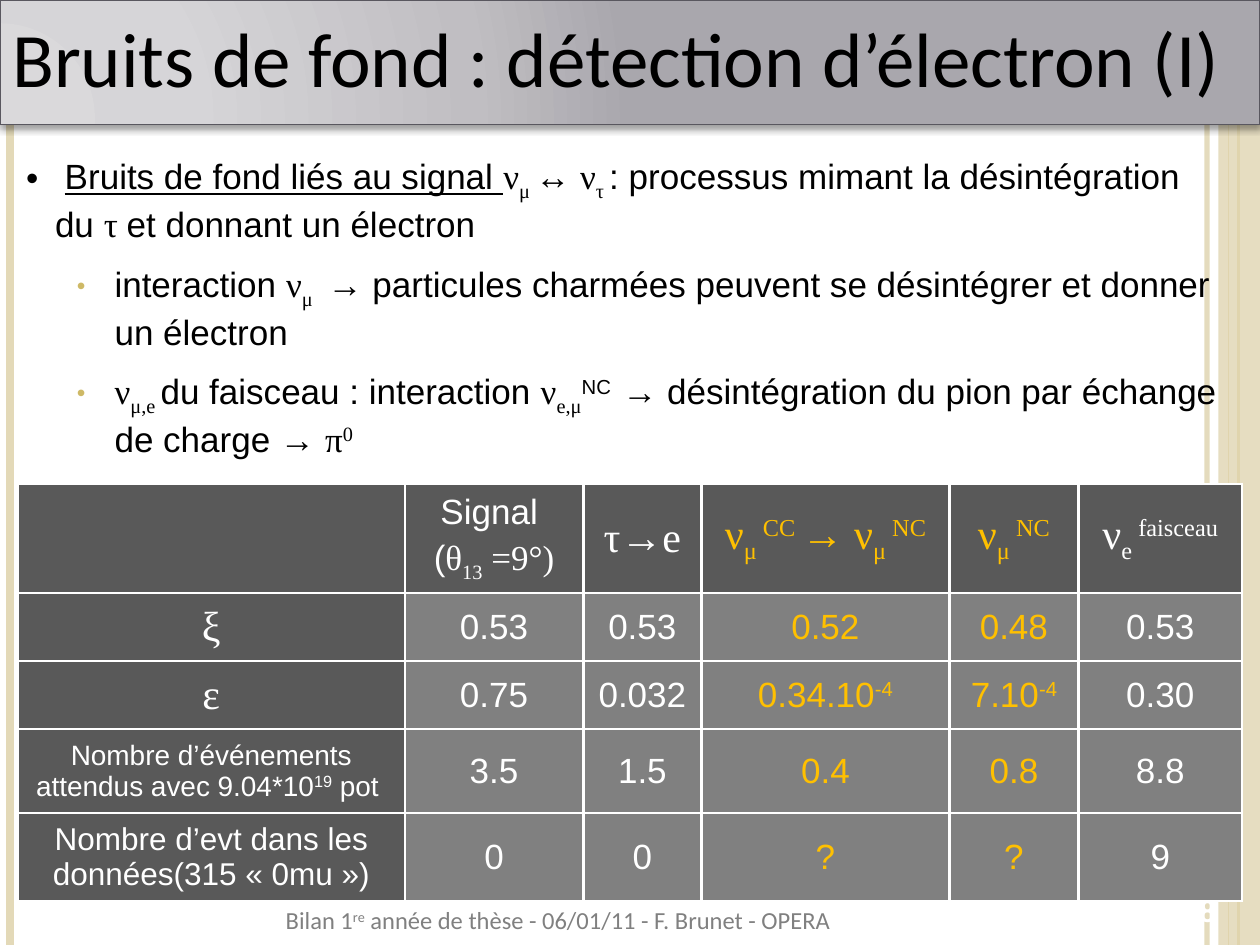
"""Build the slide on backgrounds to electron detection, with its table of expected events."""
from pptx import Presentation
from pptx.dml.color import RGBColor
from pptx.enum.shapes import MSO_CONNECTOR, MSO_SHAPE
from pptx.enum.text import MSO_ANCHOR, PP_ALIGN
from pptx.oxml import parse_xml
from pptx.oxml.ns import nsdecls
from pptx.util import Cm, Pt

TITLE = "Bruits de fond : détection d’électron (I)"
FOOTER = [("", "Bilan 1"), ("^", "re"), ("", " année de thèse - 06/01/11 - F. Brunet - OPERA")]
PAGE = "8"

POINTS = [
    [("", " "), ("U", "Bruits de fond liés au signal "), ("T", "ν"), ("T_", "μ "), ("", "↔ "),
     ("T", "ν"), ("T_", "τ "), ("", ": processus mimant la désintégration du "), ("T", "τ "),
     ("", "et donnant un électron")],
    [("", "interaction "), ("T", "ν"), ("T_", "μ "),
     ("", " → particules charmées peuvent se désintégrer et donner un électron")],
    [("T", "ν"), ("T_", "μ,e "), ("", "du faisceau : interaction "), ("T", "ν"), ("T_", "e,μ"),
     ("^", "NC  "), ("", "→ désintégration du pion par échange de charge → "), ("T", "π"),
     ("T^", "0")],
]

HEADINGS = [
    (20, [[("", "Signal ")], [("", "("), ("T", "θ"), ("T_", "13"), ("T", " =9°)")]]),
    (24, [[("T", "τ→e")]]),
    (24, [[("T", "ν"), ("T_", "μ "), ("T^", "CC "), ("T", "→ ν"), ("T_", "μ "), ("T^", "NC")]]),
    (24, [[("T", "ν"), ("T_", "μ "), ("T^", "NC")]]),
    (24, [[("T", "ν"), ("T_", "e "), ("T^", "faisceau")]]),
]
LABELS = [
    (24, [[("T", "ξ")]]),
    (24, [[("T", "ε")]]),
    (16, [[("", "Nombre d’événements attendus avec 9.04*10"), ("^", "19"), ("", " pot ")]]),
    (18, [[("", "Nombre d’evt dans les données(315 «\u00a00mu\u00a0»)")]]),
]
VALUES = [
    ["0.53", "0.53", "0.52", "0.48", "0.53"],
    ["0.75", "0.032", "0.34.10^-4", "7.10^-4", "0.30"],
    ["3.5", "1.5", "0.4", "0.8", "8.8"],
    ["0", "0", "?", "?", "9"],
]
GOLD_COLUMNS = (3, 4)
COLUMN_WIDTHS = [7.8, 3.6, 2.38, 5, 2.6, 3.3]
ROW_HEIGHTS = [2.18, 1.37, 1.37, 1.69, 1.75]

SAND, OCHRE, WHITE, GOLD = "E3D9B8", "CEB966", "FFFFFF", "FFC000"
DARK, GREY = "595959", "808080"
STRIPES = [(24.33, SAND, 3, 93), (0.2, SAND, 4.5, 100), (24.97, OCHRE, 1.5, 100),
           (24.77, OCHRE, 0.75, 100)]
BANNER_STOPS = [(0, "DAD9DB"), (30, "D6D5D8"), (75, "C0BEC2"), (100, "A9A7AD")]
BULLETS = [
    {"margin": 0.58, "hang": 0.58, "color": "000000", "scale": 100},
    {"margin": 1.78, "hang": 0.76, "color": OCHRE, "scale": 70},
]


def color(code):
    return RGBColor.from_string(code)


def apply(target, formats):
    for name, value in formats.items():
        setattr(target, name, value)


def drawing(tag, attributes="", inner=""):
    return parse_xml(f'<a:{tag} {nsdecls("a")} {attributes}>{inner}</a:{tag}>')


def fade(part, percent):
    shade = part._element.xpath("./p:spPr//a:srgbClr")[0]
    shade.append(drawing("alpha", f'val="{percent * 1000}"'))


def write(frame, paragraphs, size, ink, face="Arial", bold=False, layout=None, gap=0):
    for number, runs in enumerate(paragraphs):
        paragraph = frame.add_paragraph() if number else frame.paragraphs[0]
        apply(paragraph, {"space_before": Pt(gap if number else 0), **(layout or {})})
        for marks, words in runs:
            run = paragraph.add_run()
            run.text = words
            apply(run.font, {"name": "Times New Roman" if "T" in marks else face,
                             "size": Pt(size), "bold": bold, "underline": "U" in marks})
            run.font.color.rgb = color(ink)
            for mark, shift in (("_", "-25000"), ("^", "30000")):
                if mark in marks:
                    run.font._element.set("baseline", shift)


def text_box(slide, place, anchor=MSO_ANCHOR.TOP):
    frame = slide.shapes.add_textbox(*map(Cm, place)).text_frame
    apply(frame, {"word_wrap": True, "vertical_anchor": anchor})
    return frame


def rectangle(slide, place):
    shape = slide.shapes.add_shape(MSO_SHAPE.RECTANGLE, *map(Cm, place))
    shape.shadow.inherit = False
    shape.fill.solid()
    return shape


def add_stripes(slide):
    for x, ink, width, opacity in STRIPES:
        stripe = slide.shapes.add_connector(MSO_CONNECTOR.STRAIGHT, Cm(x), 0, Cm(x), Cm(19.05))
        stripe.line.color.rgb = color(ink)
        stripe.line.width = Pt(width)
        stripe._element.spPr.append(drawing("effectLst"))
        fade(stripe, opacity)
    band = rectangle(slide, (24.56, 0, 0.84, 19.05))
    band.fill.fore_color.rgb = color(SAND)
    band.line.fill.background()
    fade(band, 87)


def add_banner(slide):
    banner = rectangle(slide, (0, 0, 25.4, 2.51))
    banner.line.color.rgb = color("59575F")
    banner.line.width = Pt(1)
    stops = "".join(f'<a:gs pos="{spot * 1000}"><a:srgbClr val="{shade}"/></a:gs>'
                    for spot, shade in BANNER_STOPS)
    focus = '<a:fillToRect l="5000" t="100000" r="120000" b="10000"/>'
    properties = banner._element.spPr
    solid = properties.xpath("./a:solidFill")[0]
    properties.replace(solid, drawing(
        "gradFill", 'rotWithShape="1"', f'<a:gsLst>{stops}</a:gsLst><a:path path="circle">{focus}</a:path>'))
    properties.xpath("./a:effectLst")[0].append(drawing(
        "outerShdw", f'blurRad="{Pt(4)}" dist="{Pt(2)}" dir="5400000" rotWithShape="0"',
        '<a:srgbClr val="000000"><a:alpha val="40000"/></a:srgbClr>'))
    apply(banner.text_frame, {"word_wrap": True, "vertical_anchor": MSO_ANCHOR.MIDDLE,
                              "margin_bottom": Cm(0.36)})
    write(banner.text_frame, [[("", TITLE)]], 44, "000000", "Calibri",
          layout={"alignment": PP_ALIGN.LEFT})


def add_points(slide):
    frame = text_box(slide, (0.28, 3, 24.64, 6.25))
    write(frame, POINTS, 20, "000000", gap=10)
    for number, paragraph in enumerate(frame.paragraphs):
        level = min(number, 1)
        bullet = BULLETS[level]
        paragraph.level = level
        properties = paragraph._p.get_or_add_pPr()
        properties.set("marL", str(Cm(bullet["margin"])))
        properties.set("indent", str(-Cm(bullet["hang"])))
        for part in (drawing("buClr", inner=f'<a:srgbClr val="{bullet["color"]}"/>'),
                     drawing("buSzPct", f'val="{bullet["scale"] * 1000}"'),
                     drawing("buFont", 'typeface="Arial"'), drawing("buChar", 'char="•"')):
            properties.append(part)


def fill_cell(cell, paragraphs, size, ink, back):
    cell.vertical_anchor = MSO_ANCHOR.MIDDLE
    write(cell.text_frame, paragraphs, size, ink, layout={"alignment": PP_ALIGN.CENTER}, gap=4)
    cell.fill.solid()
    cell.fill.fore_color.rgb = color(back)
    for place, side in enumerate("LRTB"):
        cell._tc.get_or_add_tcPr().insert(place, drawing(
            f"ln{side}", f'w="{Pt(1.5)}"', f'<a:solidFill><a:srgbClr val="{WHITE}"/></a:solidFill>'))


def add_events(slide):
    table = slide.shapes.add_table(len(ROW_HEIGHTS), len(COLUMN_WIDTHS), Cm(0.36), Cm(9.75),
                                   Cm(sum(COLUMN_WIDTHS)), Cm(sum(ROW_HEIGHTS))).table
    apply(table, {"first_row": False, "horz_banding": False})
    for column, width in zip(table.columns, COLUMN_WIDTHS):
        column.width = Cm(width)
    for row, height in zip(table.rows, ROW_HEIGHTS):
        row.height = Cm(height)
    grid = [[(20, []), *HEADINGS]]
    for label, numbers in zip(LABELS, VALUES):
        split = [number.partition("^") for number in numbers]
        grid.append([label, *((20, [[("", base)] + [("^", power)] * bool(power)])
                              for base, _, power in split)])
    for r, line in enumerate(grid):
        for c, (size, paragraphs) in enumerate(line):
            fill_cell(table.cell(r, c), paragraphs, size, GOLD if c in GOLD_COLUMNS else WHITE,
                      GREY if r and c else DARK)


def main():
    deck = Presentation()
    apply(deck, {"slide_width": Cm(25.4), "slide_height": Cm(19.05)})
    slide = deck.slides.add_slide(deck.slide_layouts[6])
    add_stripes(slide)
    add_banner(slide)
    add_points(slide)
    write(text_box(slide, (23.29, 17.83, 2.11, 1.02), MSO_ANCHOR.MIDDLE), [[("", PAGE)]], 18, WHITE,
          "Calibri", bold=True, layout={"alignment": PP_ALIGN.CENTER})
    add_events(slide)
    write(text_box(slide, (5.51, 18.03, 15.06, 1.02), MSO_ANCHOR.MIDDLE), [FOOTER], 14, GREY, "Calibri")
    deck.save("out.pptx")


if __name__ == "__main__":
    main()
